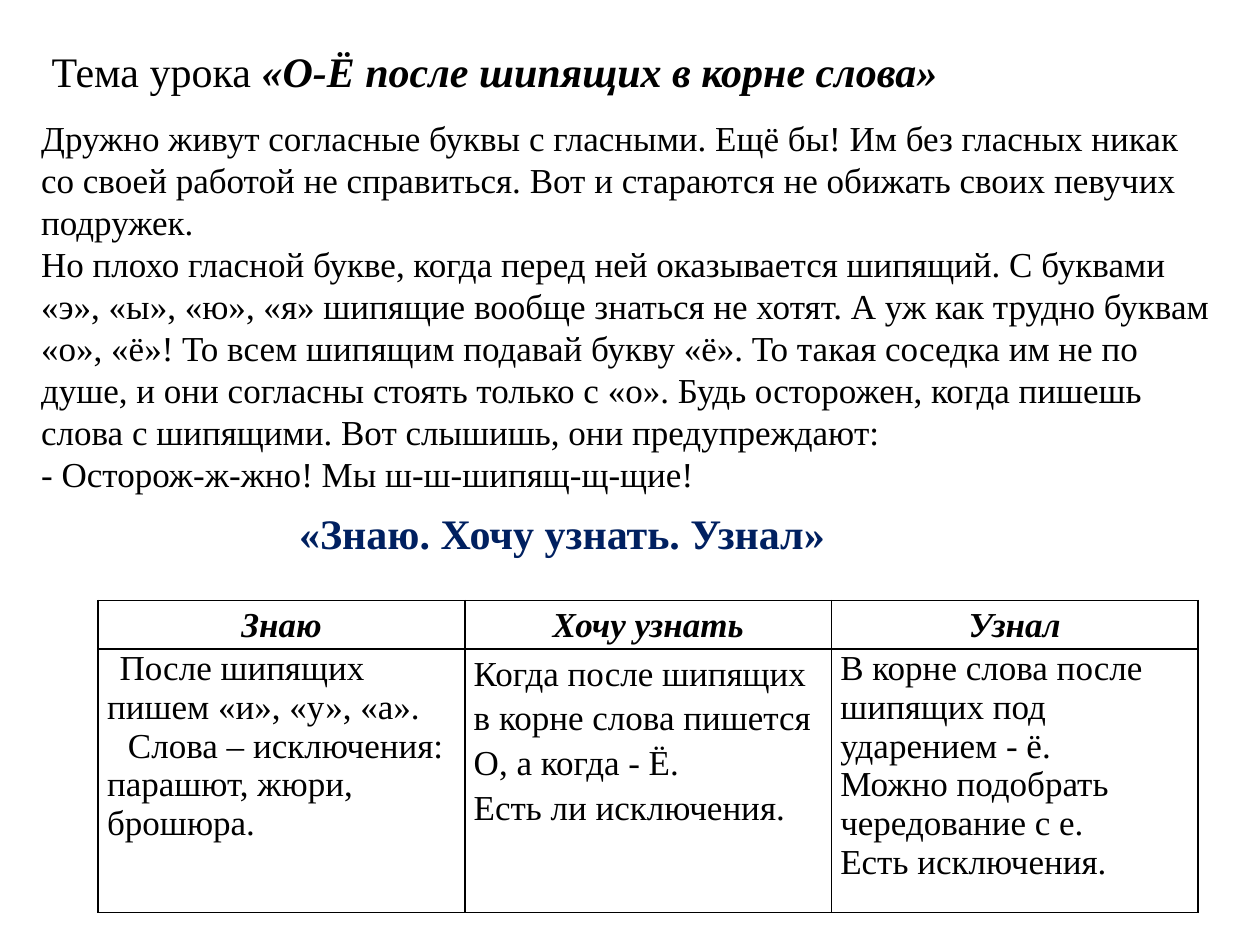
from dataclasses import dataclass

from lxml.etree import SubElement as Sub
from pptx import Presentation
from pptx.dml.color import RGBColor as Rgb
from pptx.enum.text import MSO_ANCHOR as Anchor, MSO_AUTO_SIZE as Fit, PP_ALIGN as Align
from pptx.oxml.ns import qn
from pptx.util import Cm, Pt


@dataclass(frozen=True)
class Theme:
    font: str = "Times New Roman"
    ink: str = "000000"
    navy: str = "002060"
    head: int = 24
    body: int = 20
    line: float = 1


@dataclass(frozen=True)
class Run:
    text: str
    size: int
    color: str
    bold: bool = False
    slant: bool = False


@dataclass(frozen=True)
class Para:
    runs: tuple[Run, ...]
    align: Align = Align.LEFT
    space: float = 1.0
    indent: float = 0


@dataclass(frozen=True)
class Box:
    left: float
    top: float
    width: float
    height: float
    paras: tuple[Para, ...]
    anchor: Anchor = Anchor.TOP


THEME = Theme()


def plain(text: str, space: float = 1.0, indent: float = 0) -> Para:
    return Para((Run(text, THEME.body, THEME.ink),), space=space, indent=indent)


def title(text: str) -> Para:
    run = Run(text, THEME.body, THEME.ink, bold=True, slant=True)
    return Para((run,), Align.CENTER, 1.15)


# Text boxes
BOXES = (
    Box(2.59, 10.11, 17.48, 1.27, (
        Para((Run("«Знаю. Хочу узнать. Узнал»", THEME.head, THEME.navy, bold=True),),
             Align.CENTER),
    ), Anchor.MIDDLE),
    Box(0.79, 0.79, 22.02, 1.27, (
        Para((Run("Тема урока ", THEME.head, THEME.ink),
              Run("«О-Ё после шипящих в корне слова»", THEME.head, THEME.ink,
                  bold=True, slant=True))),
    )),
    Box(0.58, 2.18, 24.21, 7.95, (
        plain("Дружно живут согласные буквы с гласными. Ещё бы! Им без гласных никак "
              "со своей работой не справиться. Вот и стараются не обижать своих певучих "
              "подружек."),
        plain("Но плохо гласной букве, когда перед ней оказывается шипящий. С буквами "
              "«э», «ы», «ю», «я» шипящие вообще знаться не хотят. А уж как трудно буквам "
              "«о», «ё»! То всем шипящим подавай букву «ё». То такая соседка им не по "
              "душе, и они согласны стоять только с «о». Будь осторожен, когда пишешь "
              "слова с шипящими. Вот слышишь, они предупреждают:"),
        plain("- Осторож-ж-жно! Мы ш-ш-шипящ-щ-щие!"),
    ), Anchor.MIDDLE),
)

# Table: one list of paragraphs per cell
ROWS = (
    ((title("Знаю"),), (title("Хочу узнать"),), (title("Узнал"),)),
    (
        (plain("После шипящих пишем «и», «у», «а».", indent=0.25),
         plain("Слова – исключения: парашют, жюри, брошюра.", indent=0.42)),
        (plain("Когда после шипящих в корне слова пишется О, а когда - Ё.", 1.15),
         plain("Есть ли исключения.", 1.15)),
        (plain("В корне слова после шипящих под ударением - ё."),
         plain("Можно подобрать чередование с е."),
         plain("Есть исключения.")),
    ),
)
HEIGHTS = (0.86, 5.31)
COL = 7.39


def write(frame, paras: tuple[Para, ...]) -> None:
    for i, item in enumerate(paras):
        para = frame.add_paragraph() if i else frame.paragraphs[0]
        para.alignment = item.align
        para.line_spacing = item.space
        if item.indent:
            props = para._p.get_or_add_pPr()
            props.set("marL", "0")
            props.set("indent", str(Cm(item.indent)))
        for part in item.runs:
            run = para.add_run()
            run.text = part.text
            font = run.font
            font.name, font.size = THEME.font, Pt(part.size)
            font.bold, font.italic = part.bold, part.slant
            font.color.rgb = Rgb.from_string(part.color)


def add_box(slide, box: Box) -> None:
    shape = slide.shapes.add_textbox(
        Cm(box.left), Cm(box.top), Cm(box.width), Cm(box.height))
    frame = shape.text_frame
    frame.word_wrap = True
    frame.auto_size = Fit.SHAPE_TO_FIT_TEXT
    frame.vertical_anchor = box.anchor
    write(frame, box.paras)


def rule(cell) -> None:
    props = cell._tc.get_or_add_tcPr()
    for side in ("lnL", "lnR", "lnT", "lnB"):
        line = Sub(props, qn(f"a:{side}"), w=str(Pt(THEME.line)))
        fill = Sub(line, qn("a:solidFill"))
        Sub(fill, qn("a:srgbClr"), val=THEME.ink)


def add_grid(slide, left: float, top: float) -> None:
    count = len(ROWS[0])
    table = slide.shapes.add_table(
        len(ROWS), count, Cm(left), Cm(top), Cm(COL * count), Cm(sum(HEIGHTS))).table
    table.first_row = table.horz_banding = False
    for col in table.columns:
        col.width = Cm(COL)
    for r, row in enumerate(ROWS):
        table.rows[r].height = Cm(HEIGHTS[r])
        for c, paras in enumerate(row):
            cell = table.cell(r, c)
            cell.margin_left = cell.margin_right = Cm(0.18)
            cell.margin_top = cell.margin_bottom = 0
            rule(cell)
            cell.fill.background()
            write(cell.text_frame, paras)


def main() -> None:
    deck = Presentation()
    deck.slide_width, deck.slide_height = Cm(25.4), Cm(19.05)
    slide = deck.slides.add_slide(deck.slide_layouts[6])
    for box in BOXES:
        add_box(slide, box)
    add_grid(slide, 1.98, 12.11)
    deck.save("out.pptx")


if __name__ == "__main__":
    main()
